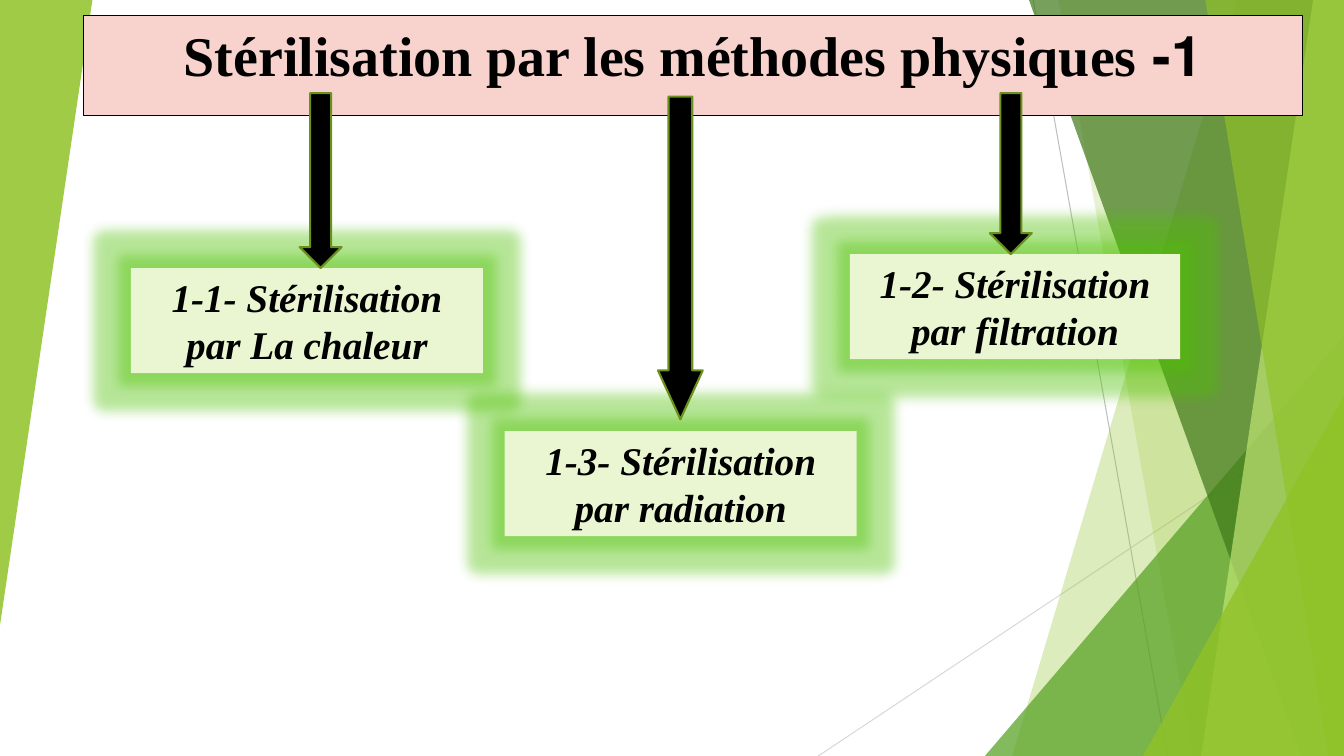
import pptx
import pptx.util
import pptx.dml.color
import pptx.enum.shapes
import pptx.enum.text
import pptx.oxml
import pptx.oxml.ns

Pt = pptx.util.Pt
Shape = pptx.enum.shapes.MSO_SHAPE
WIDE, HIGH = 960, 540
TINT = {
    "lime": "90C226", "leaf": "54A021", "moss": "3F7819", "pale": "C0E474",
    "pink": "F8D2CC", "cream": "EAF6D1", "olive": "6B901C", "glow": "4DC100",
    "ink": "000000", "gray": "BFBFBF", "mist": "D9D9D9",
}


class Pen:
    def __init__(self, slide, font):
        self.slide = slide
        self.font = font

    def color(self, name):
        return pptx.dml.color.RGBColor.from_string(TINT[name])

    def child(self, parent, tag, **attrs):
        node = pptx.oxml.parse_xml(f"<a:{tag} {pptx.oxml.ns.nsdecls('a')}/>")
        for key, value in attrs.items():
            node.set(key, str(value))
        parent.append(node)
        return node

    def paint(self, shape, fill, alpha=100, line=None, width=0.75):
        shape.shadow.inherit = False
        shape.fill.solid()
        shape.fill.fore_color.rgb = self.color(fill)
        if alpha < 100:
            solid = shape._element.spPr.find(pptx.oxml.ns.qn("a:solidFill"))
            self.child(solid[0], "alpha", val=alpha * 1000)
        if line:
            shape.line.color.rgb = self.color(line)
            shape.line.width = Pt(width)
        else:
            shape.line.fill.background()

    def line(self, start, end, color):
        line = self.slide.shapes.add_connector(
            pptx.enum.shapes.MSO_CONNECTOR.STRAIGHT,
            *(Pt(value) for value in start + end))
        line.line.color.rgb = self.color(color)
        line.line.width = Pt(0.75)
        self.child(line._element.spPr, "effectLst")

    def band(self, top, base, fill, alpha):
        form = self.slide.shapes.build_freeform(Pt(top), 0, scale=1.0)
        corners = [(WIDE, 0), (WIDE, HIGH), (base, HIGH)]
        form.add_line_segments([(Pt(x), Pt(y)) for x, y in corners], close=True)
        self.paint(form.convert_to_shape(), fill, alpha)

    def shape(self, kind, left, top, width, height):
        return self.slide.shapes.add_shape(
            kind, Pt(left), Pt(top), Pt(width), Pt(height))

    def wedge(self, left, top, width, height, fill, alpha, turn=0):
        wedge = self.shape(Shape.ISOSCELES_TRIANGLE, left, top, width, height)
        wedge.adjustments[0] = 1
        wedge.rotation = turn
        self.paint(wedge, fill, alpha)

    def arrow(self, mid, top, length, width, stem=0.5, head=0.5):
        arrow = self.shape(Shape.RIGHT_ARROW, mid - length / 2,
                           top + (length - width) / 2, length, width)
        arrow.rotation = 90
        arrow.adjustments[0] = stem
        arrow.adjustments[1] = head
        self.paint(arrow, "ink", line="olive", width=1.5)

    def label(self, shape, text, size, italic=False):
        frame = shape.text_frame
        frame.word_wrap = True
        frame.vertical_anchor = pptx.enum.text.MSO_ANCHOR.TOP
        para = frame.paragraphs[0]
        para.alignment = pptx.enum.text.PP_ALIGN.CENTER
        run = para.add_run()
        run.text = text
        run.font.name = self.font
        run.font.size = Pt(size)
        run.font.bold = True
        run.font.italic = italic
        run.font.color.rgb = self.color("ink")
        return para

    def title(self, text):
        box = self.shape(Shape.RECTANGLE, 59.5, 11, 871, 71.5)
        self.paint(box, "pink", line="ink")
        para = self.label(box, text, 40)
        para._p.get_or_add_pPr().set("rtl", "1")

    def card(self, left, top, width, text):
        box = self.shape(Shape.RECTANGLE, left, top, width, 75)
        self.paint(box, "cream")
        effects = box._element.spPr.find(pptx.oxml.ns.qn("a:effectLst"))
        glow = self.child(effects, "glow", rad=Pt(18))
        tone = self.child(glow, "srgbClr", val=TINT["glow"])
        self.child(tone, "alpha", val=40000)
        self.label(box, text, 28, italic=True)


def main():
    deck = pptx.Presentation()
    deck.slide_width, deck.slide_height = Pt(WIDE), Pt(HIGH)
    pen = Pen(deck.slides.add_slide(deck.slide_layouts[6]), "Times New Roman")

    pen.line((738, 0), (834, HIGH), "gray")
    pen.line((WIDE, 290), (584.5, HIGH), "mist")
    pen.band(884, 723, "lime", 30)
    pen.band(756, 852, "lime", 20)
    pen.wedge(703.5, 240, 256.5, 300, "leaf", 72)
    pen.band(735, 929.5, "moss", 70)
    pen.band(938, 858, "pale", 70)
    pen.band(861, 949, "lime", 65)
    pen.wedge(816.5, 283, 143.5, 257, "lime", 80)
    pen.wedge(0, 0, 66, 446.5, "lime", 85, turn=180)

    pen.title("1- Stérilisation par les méthodes physiques")
    pen.card(93.5, 191.5, 251.5, "1-1- Stérilisation par La chaleur")
    pen.card(607, 181.5, 236, "1-2- Stérilisation par filtration")
    pen.arrow(229, 66.5, 125, 30)
    pen.arrow(722, 66.5, 115, 30)
    pen.card(360.5, 308, 251.5, "1-3- Stérilisation par radiation")
    pen.arrow(486, 69, 230.5, 32, stem=0.53, head=1.09)

    deck.save("out.pptx")


if __name__ == "__main__":
    main()
